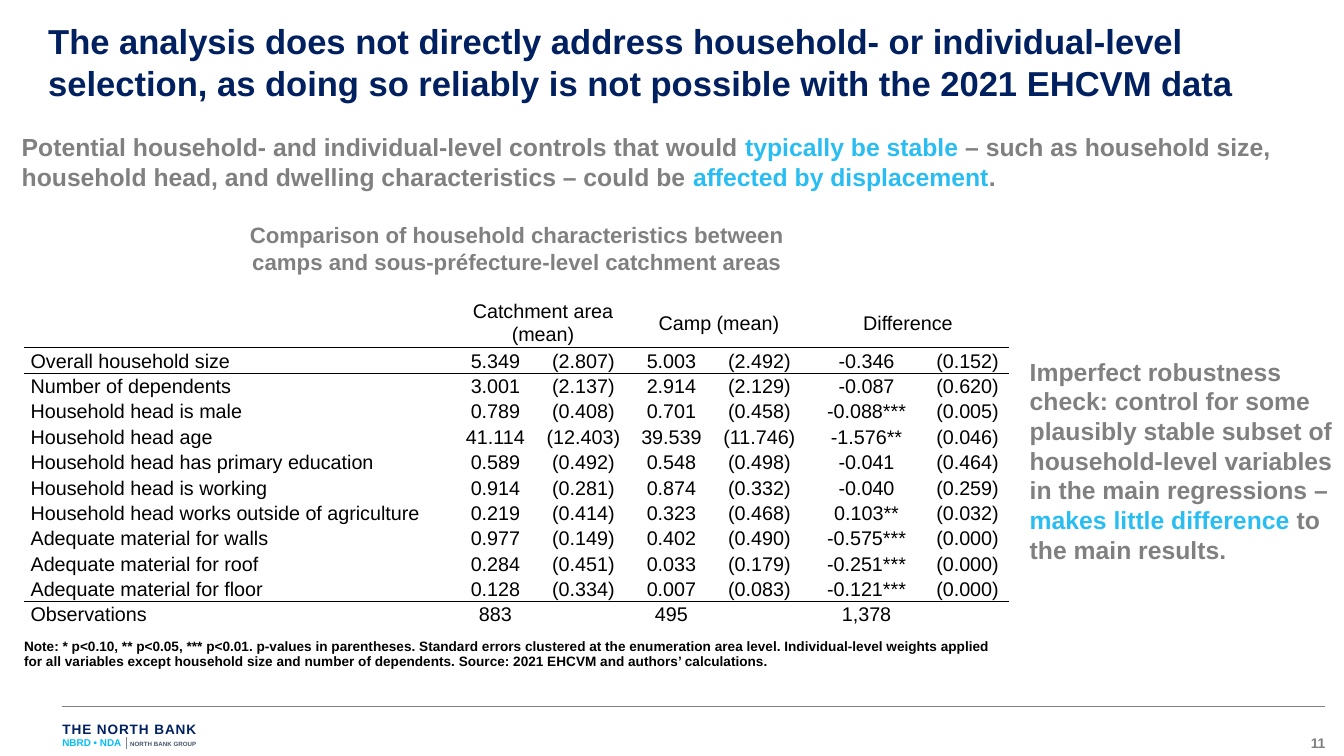
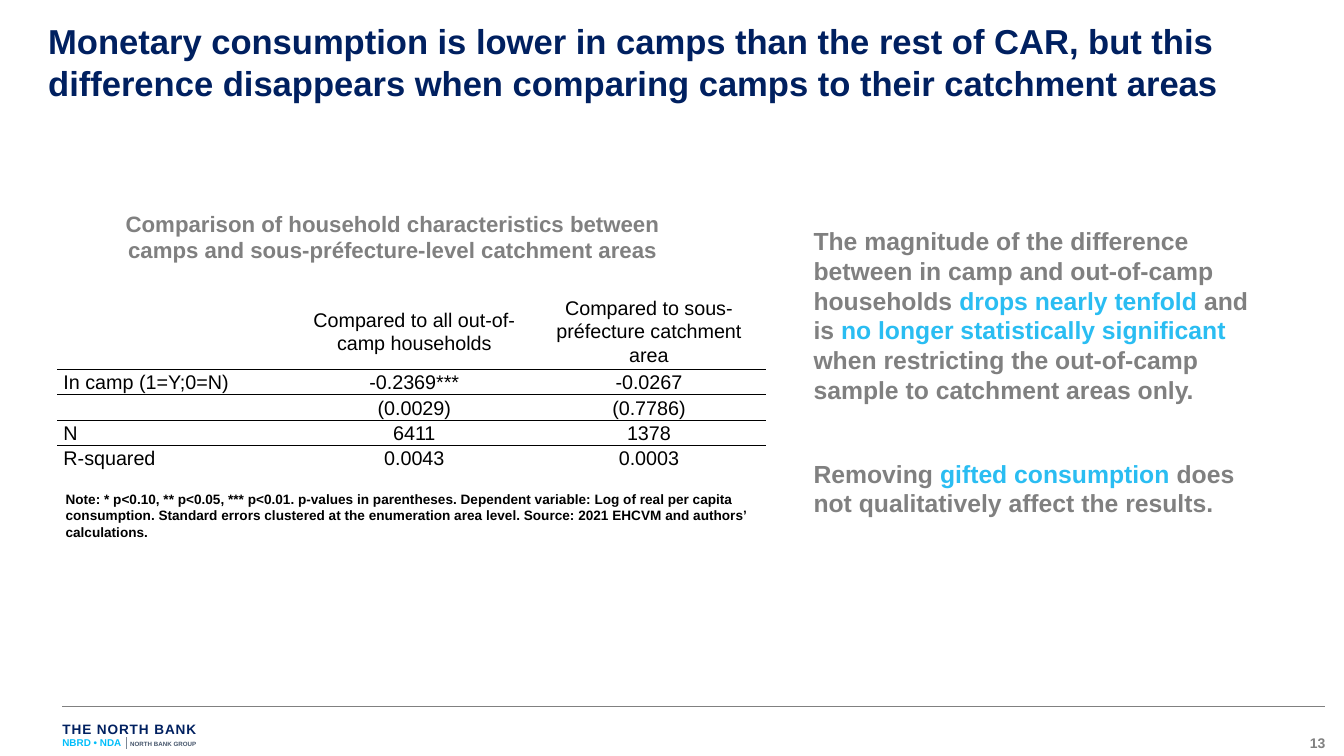
import pptx
import pptx.dml.color
import pptx.enum.text
import pptx.oxml
import pptx.oxml.ns
import pptx.util
from lxml import etree

Pt = pptx.util.Pt
RGBColor = pptx.dml.color.RGBColor
ALIGN = pptx.enum.text.PP_ALIGN
ANCHOR = pptx.enum.text.MSO_ANCHOR

NAVY = RGBColor(0x00, 0x20, 0x60)
GRAY = RGBColor(0x80, 0x80, 0x80)
SKY = RGBColor(0x2A, 0xBD, 0xF2)
CYAN = RGBColor(0x00, 0xBE, 0xFA)
SLATE = RGBColor(0x44, 0x54, 0x6A)
BLACK = RGBColor(0x00, 0x00, 0x00)

FONT = "Arial"
TABLE_SPACING = 1.07
TABLE_SIZE = 16
NOTE_SIZE = 11
ROW_HEIGHT = 19
TITLE_ONLY = 5
NO_TABLE_STYLE = "{2D5ABB26-0587-4C30-8999-92F81FD0307C}"

TABLE_HEADING = ("Comparison of household characteristics between "
                 "camps and sous-préfecture-level catchment areas")

CHARACTERISTICS = [
    ["", "Catchment area (mean)", "", "Camp (mean)", "", "Difference", ""],
    ["Overall household size", "5.349", "(2.807)", "5.003", "(2.492)", "-0.346", "(0.152)"],
    ["Number of dependents", "3.001", "(2.137)", "2.914", "(2.129)", "-0.087", "(0.620)"],
    ["Household head is male", "0.789", "(0.408)", "0.701", "(0.458)", "-0.088***", "(0.005)"],
    ["Household head age", "41.114", "(12.403)", "39.539", "(11.746)", "-1.576**", "(0.046)"],
    ["Household head has primary education", "0.589", "(0.492)", "0.548", "(0.498)", "-0.041",
     "(0.464)"],
    ["Household head is working", "0.914", "(0.281)", "0.874", "(0.332)", "-0.040", "(0.259)"],
    ["Household head works outside of agriculture", "0.219", "(0.414)", "0.323", "(0.468)",
     "0.103**", "(0.032)"],
    ["Adequate material for walls", "0.977", "(0.149)", "0.402", "(0.490)", "-0.575***",
     "(0.000)"],
    ["Adequate material for roof", "0.284", "(0.451)", "0.033", "(0.179)", "-0.251***",
     "(0.000)"],
    ["Adequate material for floor", "0.128", "(0.334)", "0.007", "(0.083)", "-0.121***",
     "(0.000)"],
    ["Observations", "883", "", "495", "", "1,378", ""],
]

CONSUMPTION = [
    ["", "Compared to all out-of-camp households", "Compared to sous-préfecture catchment area"],
    ["In camp (1=Y;0=N)", "-0.2369***", "-0.0267"],
    ["", "(0.0029)", "(0.7786)"],
    ["N", "6411", "1378"],
    ["R-squared", "0.0043", "0.0003"],
]


def style(para, size, color, bold=True, align=ALIGN.LEFT, spacing=1.0):
    para.alignment = align
    para.line_spacing = spacing
    para.font.name = FONT
    para.font.size = Pt(size)
    para.font.bold = bold
    para.font.color.rgb = color


def set_insets(frame, across, down):
    frame.margin_left = frame.margin_right = Pt(across)
    frame.margin_top = frame.margin_bottom = Pt(down)


def add_text(page, place, paragraphs, size, color, insets=(7.2, 3.6), gap=0, **look):
    """Add a text box; each paragraph lists spans that alternate plain and highlighted."""
    box = page.shapes.add_textbox(*map(Pt, place))
    frame = box.text_frame
    frame.word_wrap = True
    set_insets(frame, *insets)
    for index, spans in enumerate(paragraphs):
        para = frame.add_paragraph() if index else frame.paragraphs[0]
        if index:
            para.space_before = Pt(gap)
        style(para, size, color, **look)
        for position, text in enumerate(spans):
            span = para.add_run()
            span.text = text
            if position % 2:
                span.font.color.rgb = SKY
    return box


def add_footer(page, number):
    flush = {"insets": (0, 0)}
    rule = page.shapes.add_connector(1, Pt(50.5), Pt(571.5), Pt(1073), Pt(571.5))
    rule.line.color.rgb = GRAY
    rule.line.width = Pt(0.75)
    etree.SubElement(rule._element.spPr, pptx.oxml.ns.qn("a:effectLst"))

    add_text(page, (1030, 595, 43, 14), [[str(number)]], 11.3, GRAY, align=ALIGN.RIGHT, **flush)
    name = add_text(page, (50.5, 584, 144, 14), [["THE NORTH BANK"]], 11, NAVY, **flush)
    name.text_frame.paragraphs[0].runs[0]._r.get_or_add_rPr().set("spc", "70")

    units = add_text(page, (50.5, 596, 116, 9.5), [["NBRD • NDA "]], 8, CYAN, **flush)
    for text, size in (("│", 8), ("NORTH BANK GROUP", 5)):
        span = units.text_frame.paragraphs[0].add_run()
        span.text = text
        span.font.size = Pt(size)
        span.font.color.rgb = SLATE


def add_page(deck, title, number):
    page = deck.slides.add_slide(deck.slide_layouts[TITLE_ONLY])
    add_footer(page, number)
    holder = page.shapes.title
    holder.left, holder.top, holder.width, holder.height = map(Pt, (39, 16.5, 986, 68))
    frame = holder.text_frame
    frame.text = title
    frame.word_wrap = True
    frame.auto_size = pptx.enum.text.MSO_AUTO_SIZE.NONE
    frame.vertical_anchor = ANCHOR.TOP
    set_insets(frame, 0, 0)
    style(frame.paragraphs[0], 28, NAVY)
    return page


def add_plain_table(page, left, top, widths, heights):
    """Add an empty table without style, borders or banding."""
    frame = page.shapes.add_table(len(heights), len(widths), Pt(left), Pt(top),
                                  Pt(sum(widths)), Pt(sum(heights)))
    table = frame.table
    table.first_row = table.horz_banding = False
    table._tbl.tblPr.find(pptx.oxml.ns.qn("a:tableStyleId")).text = NO_TABLE_STYLE
    for column, width in zip(table.columns, widths):
        column.width = Pt(width)
    for row, height in zip(table.rows, heights):
        row.height = Pt(height)
    return table


def fill_cell(cell, text, size, inset=0, **look):
    cell.fill.background()
    set_insets(cell, inset, 0)
    para = cell.text_frame.paragraphs[0]
    style(para, size, BLACK, **look)
    if text:
        span = para.add_run()
        span.text = text
        # Row heights are measured from run sizes, not from the paragraph font.
        span.font.size = Pt(size)
    para._p.get_or_add_endParaRPr().set("sz", str(size * 100))


def add_border(cell, side):
    cell._tc.get_or_add_tcPr().append(pptx.oxml.parse_xml(
        f'<a:{side} {pptx.oxml.ns.nsdecls("a")} w="{Pt(1)}">'
        f'<a:solidFill><a:srgbClr val="{BLACK}"/></a:solidFill></a:{side}>'))


def add_data_table(page, left, top, widths, header_height, rows, ruled_rows):
    """Add a table of values with a rule below each row listed in ruled_rows."""
    heights = [header_height] + [ROW_HEIGHT] * (len(rows) - 1)
    table = add_plain_table(page, left, top, widths, heights)
    for row_index, texts in enumerate(rows):
        for column_index, text in enumerate(texts):
            cell = table.cell(row_index, column_index)
            if row_index - 1 in ruled_rows:
                add_border(cell, "lnT")
            if row_index in ruled_rows:
                add_border(cell, "lnB")
            cell.vertical_anchor = ANCHOR.MIDDLE
            fill_cell(cell, text, TABLE_SIZE, inset=5, bold=False, spacing=TABLE_SPACING,
                      align=ALIGN.CENTER if column_index else ALIGN.LEFT)
    return table


def add_heading(page, left, top):
    add_text(page, (left, top, 497.5, 51), [[TABLE_HEADING]], 18, GRAY, align=ALIGN.CENTER)


def build_selection_page(deck):
    page = add_page(deck, "The analysis does not directly address household- or individual-level "
                    "selection, as doing so reliably is not possible with the 2021 EHCVM data", 11)
    add_text(page, (10.5, 103.5, 1043, 58), [[
        "Potential household- and individual-level controls that would ",
        "typically be stable",
        " – such as household size, household head, and dwelling characteristics – could be ",
        "affected by displacement", "."]], 20, GRAY)
    table = add_data_table(page, 19.8, 240.5, (348.5, 65.5, 77, 65.5, 77, 96.5, 67), 38,
                           CHARACTERISTICS, (0, 10))
    for column in (1, 3, 5):
        table.cell(0, column).merge(table.cell(0, column + 1))
    add_heading(page, 169.5, 175.5)
    note = add_plain_table(page, 19.5, 517.5, [798], [31])
    fill_cell(note.cell(0, 0),
              "Note: * p<0.10, ** p<0.05, *** p<0.01. p-values in parentheses. Standard errors "
              "clustered at the enumeration area level. Individual-level weights applied for all "
              "variables except household size and number of dependents. Source: 2021 EHCVM and "
              "authors’ calculations.", NOTE_SIZE)
    add_text(page, (826.5, 285, 261.5, 176), [[
        "Imperfect robustness check: control for some plausibly stable subset of "
        "household-level variables in the main regressions – ",
        "makes little difference ", "to the main results."]], 20, GRAY)


def build_consumption_page(deck):
    page = add_page(deck, "Monetary consumption is lower in camps than the rest of CAR, but this "
                    "difference disappears when comparing camps to their catchment areas", 13)
    add_data_table(page, 46.4, 237.5, (194, 190, 190), 57, CONSUMPTION, (0, 2))
    add_heading(page, 69, 166.5)
    add_text(page, (46, 394, 574, 47.5), [[
        "Note: * p<0.10, ** p<0.05, *** p<0.01. p-values in parentheses. Dependent variable: Log "
        "of real per capita consumption. Standard errors clustered at the enumeration area "
        "level. Source: 2021 EHCVM and authors’ calculations."]], NOTE_SIZE, BLACK)
    add_text(page, (651.5, 179.5, 367, 245), [
        ["The magnitude of the difference between in camp and out-of-camp households ",
         "drops nearly tenfold", " and is ", "no longer statistically significant ",
         "when restricting the out-of-camp sample to catchment areas only."],
        ["Removing ", "gifted consumption ", "does not qualitatively affect the results."],
    ], 20, GRAY, gap=44)


def main():
    deck = pptx.Presentation()
    deck.slide_width, deck.slide_height = Pt(1088), Pt(612)
    build_selection_page(deck)
    build_consumption_page(deck)
    deck.save("out.pptx")


if __name__ == "__main__":
    main()
